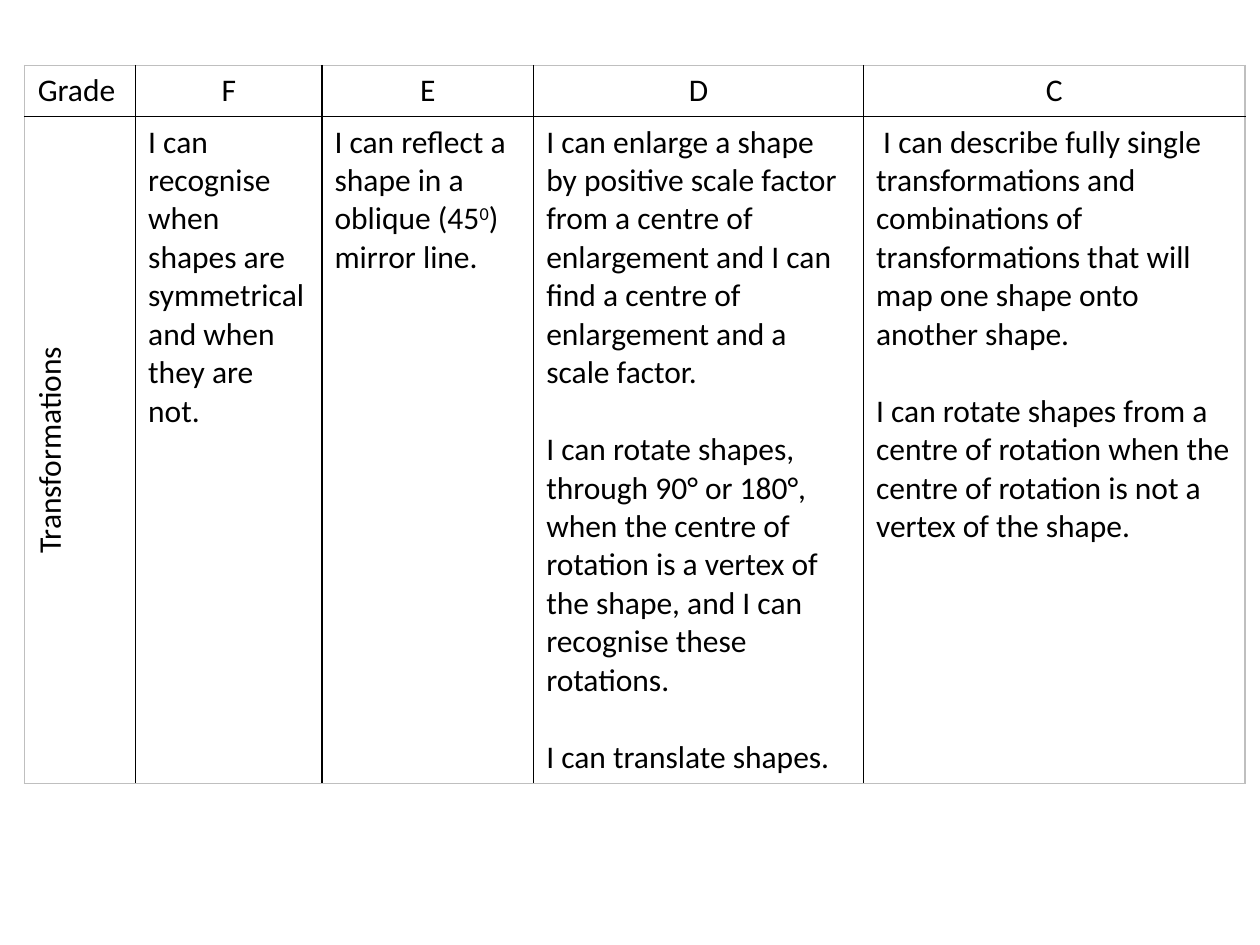
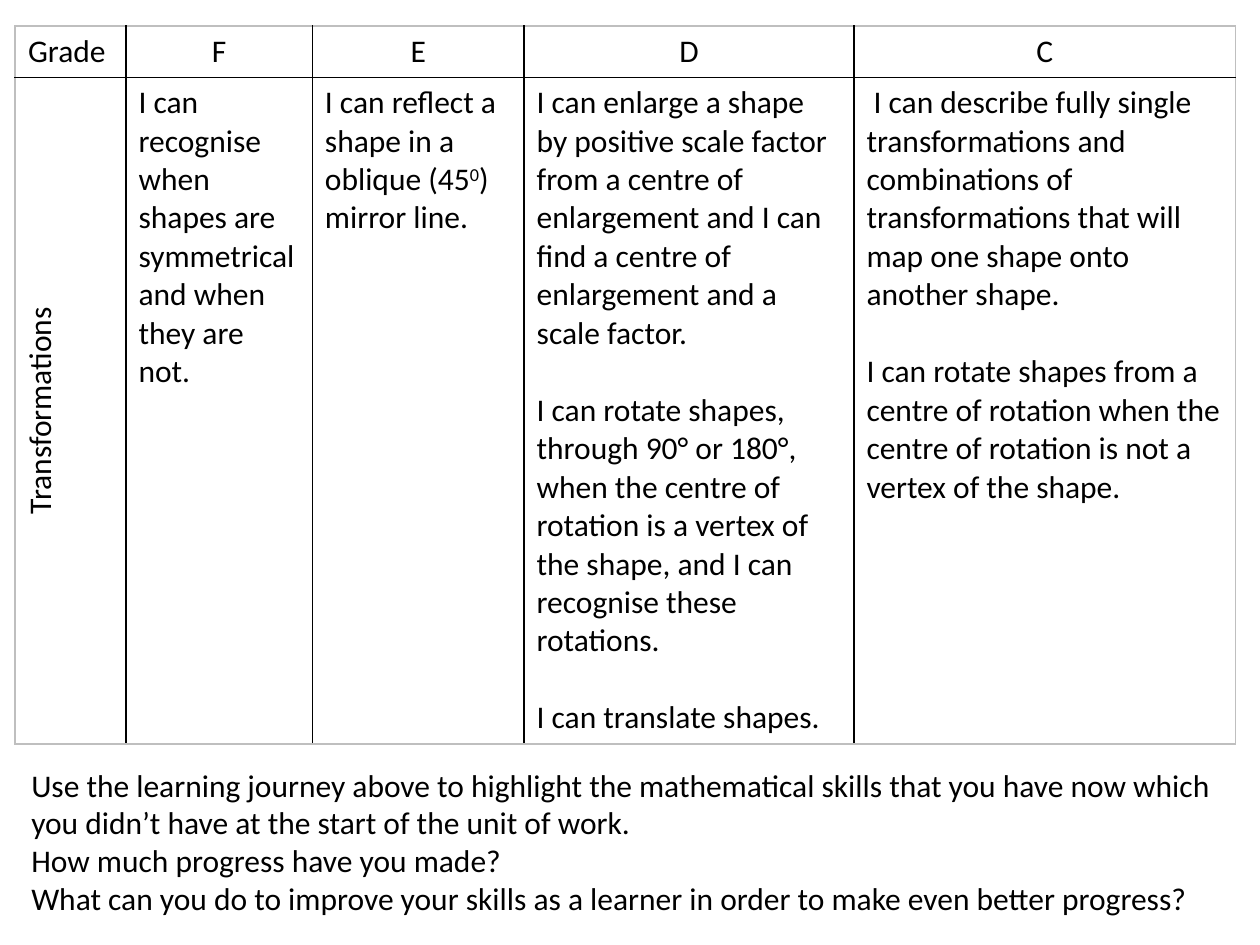
from dataclasses import dataclass

from lxml import etree
from pptx import Presentation
from pptx.dml.color import RGBColor
from pptx.enum.text import PP_ALIGN
from pptx.oxml.ns import qn
from pptx.util import Pt

BLACK = RGBColor(0x00, 0x00, 0x00)
GREY = RGBColor(0xBF, 0xBF, 0xBF)
FONT = "Calibri"
SIZE = Pt(18)
LINE = Pt(22)
COLS = [Pt(w) for w in (63.5, 106.5, 121, 188.5, 218)]
ROWS = [Pt(29), Pt(381)]
GRADES = ["Grade ", "F", "E", "D", "C"]
TOPIC = "Transformations"


@dataclass
class Para:
    """A paragraph; text between carets is raised, gap leaves a line above."""
    words: str
    gap: bool = False
    align: PP_ALIGN = PP_ALIGN.LEFT


SKILLS = [
    [Para("I can recognise when shapes are symmetrical and when they are not.")],
    [Para("I can reflect a shape in a oblique (45^0^) mirror line.")],
    [
        Para("I can enlarge a shape by positive scale factor from a centre of "
             "enlargement and I can find a centre of enlargement and a scale factor."),
        Para("I can rotate shapes, through 90° or 180°, when the centre of rotation "
             "is a vertex of the shape, and I can recognise these", gap=True),
        Para("rotations."),
        Para("I can translate shapes.", gap=True),
    ],
    [
        Para(" I can describe fully single transformations and combinations of "
             "transformations that will map one shape onto another shape."),
        Para("I can rotate shapes from a centre of rotation when the centre of "
             "rotation is not a vertex of the shape.", gap=True),
    ],
]
TASKS = [
    Para("Use the learning journey above to highlight the mathematical skills that "
         "you have now which you didn’t have at the start of the unit of work."),
    Para("How much progress have you made?"),
    Para("What can you do to improve your skills as a learner in order to make "
         "even better progress?"),
]


def write(frame, paras: list[Para]) -> None:
    for i, para in enumerate(paras):
        p = frame.paragraphs[0] if i == 0 else frame.add_paragraph()
        p.alignment = para.align
        p.font.name, p.font.size = FONT, SIZE
        p.font.color.rgb = BLACK
        if para.gap:
            p.space_before = LINE
        for n, part in enumerate(para.words.split("^")):
            run = p.add_run()
            run.text = part
            if n % 2:
                run.font.size = SIZE
                run._r.get_or_add_rPr().set("baseline", "30000")


def edge(cell, side: str, color: RGBColor) -> None:
    line = etree.SubElement(cell._tc.get_or_add_tcPr(), qn(f"a:ln{side}"), w=str(Pt(1)))
    fill = etree.SubElement(line, qn("a:solidFill"))
    etree.SubElement(fill, qn("a:srgbClr"), val=str(color))


def frame_cell(cell, row: int, col: int) -> None:
    """Grey on the outside of the table, black between cells."""
    outer = {"L": col == 0, "R": col == len(COLS) - 1,
             "T": row == 0, "B": row == len(ROWS) - 1}
    for side, out in outer.items():
        edge(cell, side, GREY if out else BLACK)
    cell.fill.background()


def add_grades(slide, left: Pt, top: Pt) -> None:
    table = slide.shapes.add_table(
        len(ROWS), len(COLS), left, top, sum(COLS), sum(ROWS)).table
    table.first_row = table.horz_banding = False
    for col, width in zip(table.columns, COLS):
        col.width = width
    for row, height in zip(table.rows, ROWS):
        row.height = height
    heads = [[Para(grade, align=PP_ALIGN.CENTER)] for grade in GRADES]
    body = [[Para(TOPIC, align=PP_ALIGN.CENTER)], *SKILLS]
    for r, row in enumerate((heads, body)):
        for c, paras in enumerate(row):
            cell = table.cell(r, c)
            write(cell.text_frame, paras)
            frame_cell(cell, r, c)
    table.cell(1, 0)._tc.get_or_add_tcPr().set("vert", "vert270")


def add_tasks(slide) -> None:
    box = slide.shapes.add_textbox(Pt(10.8), Pt(434), Pt(703), Pt(94.5))
    box.text_frame.word_wrap = True
    write(box.text_frame, TASKS)


def main() -> None:
    deck = Presentation()
    deck.slide_width, deck.slide_height = Pt(720), Pt(540)
    blank = deck.slide_layouts[6]
    start = deck.slides.add_slide(blank)
    add_grades(start, Pt(14), Pt(37.5))
    review = deck.slides.add_slide(blank)
    add_grades(review, Pt(8.5), Pt(15))
    add_tasks(review)
    deck.save("out.pptx")


if __name__ == "__main__":
    main()
